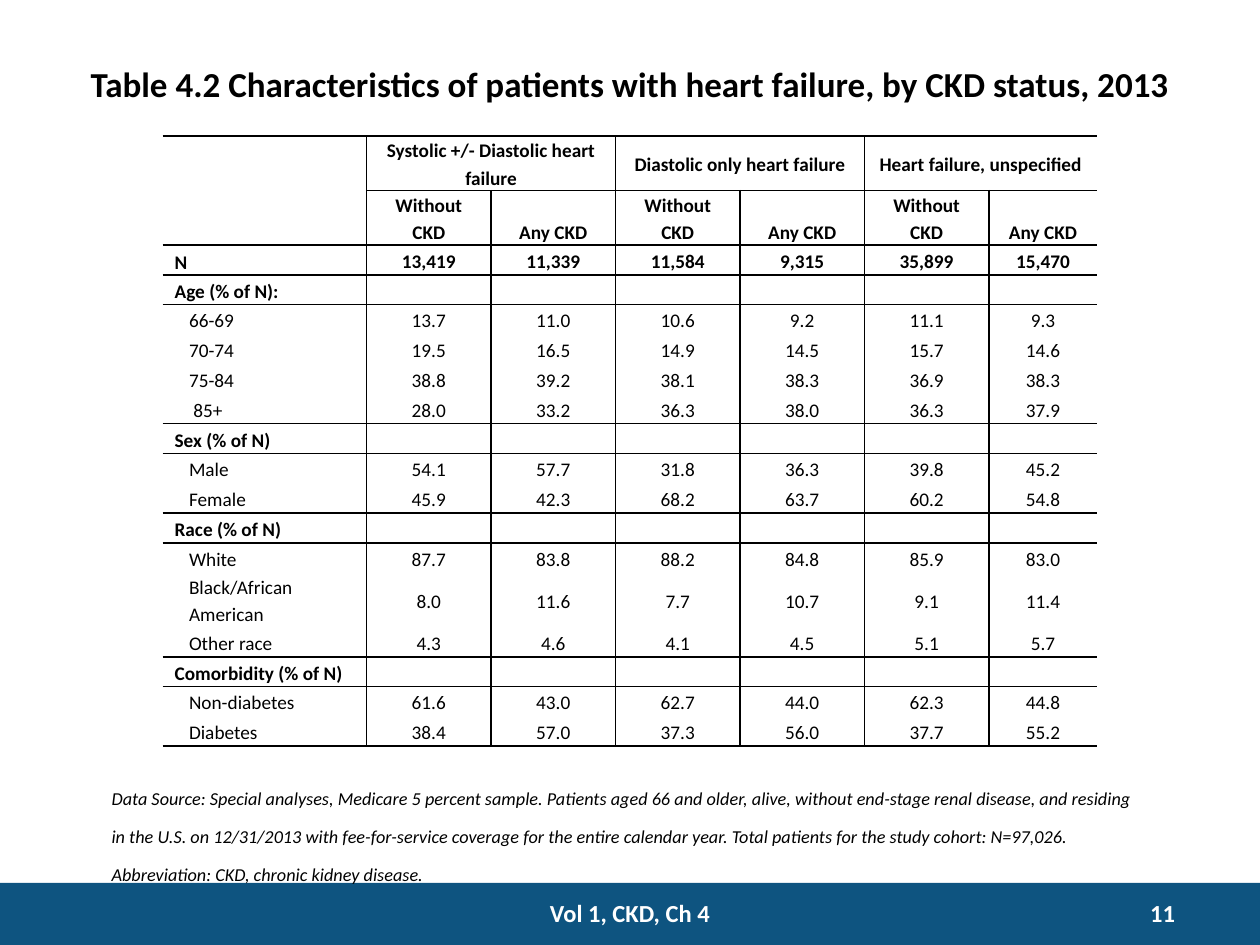
from dataclasses import dataclass
from lxml.etree import SubElement
from pptx import Presentation
from pptx.dml.color import RGBColor as RGB
from pptx.enum.shapes import MSO_SHAPE as SHAPE
from pptx.enum.text import MSO_ANCHOR as ANCHOR, MSO_AUTO_SIZE as AUTO, PP_ALIGN as ALIGN
from pptx.oxml.ns import qn
from pptx.util import Cm, Pt


@dataclass(frozen=True)
class Theme:
    font: str = "Calibri"
    ink: str = "000000"
    paper: str = "FFFFFF"
    bar: str = "0E5480"
    title: int = 20
    note: int = 18
    footer: int = 14
    cell: int = 11
    rule: int = 1
    table_style: str = "{2D5ABB26-0587-4C30-8999-92F81FD0307C}"


TITLE = "Table 4.2 Characteristics of patients with heart failure, by CKD status, 2013"
NOTE = (
    "Data Source: Special analyses, Medicare 5 percent sample. Patients aged 66 and older, "
    "alive, without end-stage renal disease, and residing in the U.S. on 12/31/2013 with "
    "fee-for-service coverage for the entire calendar year. Total patients for the study "
    "cohort: N=97,026. Abbreviation: CKD, chronic kidney disease."
)
GROUPS = ["Systolic +/- Diastolic heart failure", "Diastolic only heart failure",
          "Heart failure, unspecified"]
BODY = [
    ["N", "13,419", "11,339", "11,584", "9,315", "35,899", "15,470"],
    ["Age (% of N):"],
    ["66-69", "13.7", "11.0", "10.6", "9.2", "11.1", "9.3"],
    ["70-74", "19.5", "16.5", "14.9", "14.5", "15.7", "14.6"],
    ["75-84", "38.8", "39.2", "38.1", "38.3", "36.9", "38.3"],
    [" 85+", "28.0", "33.2", "36.3", "38.0", "36.3", "37.9"],
    ["Sex (% of N)"],
    ["Male", "54.1", "57.7", "31.8", "36.3", "39.8", "45.2"],
    ["Female", "45.9", "42.3", "68.2", "63.7", "60.2", "54.8"],
    ["Race (% of N)"],
    ["White", "87.7", "83.8", "88.2", "84.8", "85.9", "83.0"],
    ["Black/African American", "8.0", "11.6", "7.7", "10.7", "9.1", "11.4"],
    ["Other race", "4.3", "4.6", "4.1", "4.5", "5.1", "5.7"],
    ["Comorbidity (% of N)"],
    ["Non-diabetes", "61.6", "43.0", "62.7", "44.0", "62.3", "44.8"],
    ["Diabetes", "38.4", "57.0", "37.3", "56.0", "37.7", "55.2"],
]
HEADER_ROWS = 2
COL_WIDTHS = [4.11] + [2.51] * 5 + [2.18]
ROWS = [[""] + [g for name in GROUPS for g in (name, "")],
        [""] + ["Without CKD", "Any CKD"] * len(GROUPS)]
ROWS += [row + [""] * (len(COL_WIDTHS) - len(row)) for row in BODY + [[]]]
LAST = len(ROWS) - 1
SECTIONS = [i for i, row in enumerate(ROWS) if row[0] and not row[1]]
RULED_TOPS = {0, HEADER_ROWS, LAST, *SECTIONS}
TALL = {0, 1} | {i for i, row in enumerate(ROWS) if row[0].startswith("Black")}


class Deck:
    def __init__(self, prs, theme):
        self.theme = theme
        self.slide = prs.slides.add_slide(prs.slide_layouts[5])

    def add_text(self, p, text, size, color=None, align=ALIGN.LEFT, raised=False, **style):
        p.alignment = align
        r = p.add_run()
        r.text = text
        formats = {"name": self.theme.font, "size": Pt(size), **style}
        for key, value in formats.items():
            setattr(r.font, key, value)
        r.font.color.rgb = RGB.from_string(color or self.theme.ink)
        if raised:
            r.font._element.set("baseline", "30000")

    def frame(self, sp, **extra):
        formats = {"word_wrap": True, "auto_size": AUTO.NONE,
                   "vertical_anchor": ANCHOR.TOP, **extra}
        for key, value in formats.items():
            setattr(sp.text_frame, key, value)
        return sp.text_frame.paragraphs[0]

    def title(self, text, x, y, w, h):
        sp = self.slide.shapes.title
        sp.left, sp.top, sp.width, sp.height = map(Cm, (x, y, w, h))
        p = self.frame(sp, margin_top=Cm(0.4))
        self.add_text(p, text, self.theme.title, align=ALIGN.CENTER, bold=True)

    def text(self, text, x, y, w, h, size, **style):
        sp = self.slide.shapes.add_textbox(*map(Cm, (x, y, w, h)))
        self.add_text(self.frame(sp), text, size, **style)

    def bar(self, x, y, w, h):
        sp = self.slide.shapes.add_shape(SHAPE.RECTANGLE, *map(Cm, (x, y, w, h)))
        sp.shadow.inherit = False
        sp.fill.solid()
        sp.fill.fore_color.rgb = RGB.from_string(self.theme.bar)
        sp.line.fill.background()

    def borders(self, cell, sides):
        tcPr = cell._tc.get_or_add_tcPr()
        for side in "LRTB":
            if side in sides:
                ln = SubElement(tcPr, qn(f"a:ln{side}"), w=str(Pt(self.theme.rule)))
                fill = SubElement(ln, qn("a:solidFill"))
                SubElement(fill, qn("a:srgbClr"), val=self.theme.ink)

    def cell(self, cell, text, sides, anchor, indent=0, **style):
        self.borders(cell, sides)
        cell.fill.background()
        formats = {"margin_left": Cm(0.24), "margin_right": Cm(0.24), "margin_top": 0,
                   "margin_bottom": 0, "vertical_anchor": anchor}
        for key, value in formats.items():
            setattr(cell, key, value)
        p = cell.text_frame.paragraphs[0]
        p.line_spacing = 1.15
        if text:
            p._p.get_or_add_pPr().set("marL", str(Cm(indent)))
            self.add_text(p, text, self.theme.cell, **style)
        else:
            SubElement(p._p, qn("a:endParaRPr"), sz=str(self.theme.cell * 100))

    def table(self, x, y, heights):
        size = len(ROWS), len(COL_WIDTHS)
        box = x, y, sum(COL_WIDTHS), sum(heights)
        tbl = self.slide.shapes.add_table(*size, *map(Cm, box)).table
        tbl.first_row = tbl.horz_banding = False
        tbl._tbl.tblPr.find(qn("a:tableStyleId")).text = self.theme.table_style
        for col, width in zip(tbl.columns, COL_WIDTHS):
            col.width = Cm(width)
        for row, height in zip(tbl.rows, heights):
            row.height = Cm(height)
        for i, row in enumerate(ROWS):
            for j, text in enumerate(row):
                bold = i <= HEADER_ROWS or i in SECTIONS and j == 0
                low = i == 1 or (i == HEADER_ROWS and j == 0)
                self.cell(tbl.cell(i, j), text, rules(i, j),
                          ANCHOR.BOTTOM if low else ANCHOR.MIDDLE,
                          indent=0 if j or bold else 0.29, bold=bold,
                          align=ALIGN.CENTER if j else ALIGN.LEFT)
        tbl.cell(0, 0).merge(tbl.cell(1, 0))
        for j in range(1, len(COL_WIDTHS), 2):
            tbl.cell(0, j).merge(tbl.cell(0, j + 1))
        tbl.cell(LAST, 0).merge(tbl.cell(LAST, len(COL_WIDTHS) - 1))


def rules(i, j):
    def top(row):
        return row in RULED_TOPS or (row == 1 and j > 0)

    def left(col):
        inside = 0 < col < len(COL_WIDTHS)
        return i < LAST and inside and (col % 2 == 1 or i == 1)

    found = {"L": left(j), "R": left(j + 1), "T": top(i), "B": top(i + 1)}
    return {side for side, ruled in found.items() if ruled}


def main():
    prs = Presentation()
    prs.slide_width, prs.slide_height = Cm(25.4), Cm(19.05)
    theme = Theme()
    deck = Deck(prs, theme)
    deck.bar(0, 17.8, 25.4, 1.25)
    deck.text(NOTE, 2, 15.67, 21.4, 1.8, theme.note, italic=True, raised=True)
    deck.title(TITLE, 0, 0.86, 25.4, 1.12)
    footer = {"size": theme.footer, "color": theme.paper, "bold": True}
    deck.text("Vol 1, CKD, Ch 4", 9.95, 17.98, 5.5, 0.84, align=ALIGN.CENTER, **footer)
    deck.text("11", 21.4, 17.98, 2.54, 0.76, align=ALIGN.RIGHT, **footer)
    deck.table(3.28, 2.74, [1.08 if i in TALL else 0.6 for i in range(len(ROWS))])
    prs.save("out.pptx")


if __name__ == "__main__":
    main()
